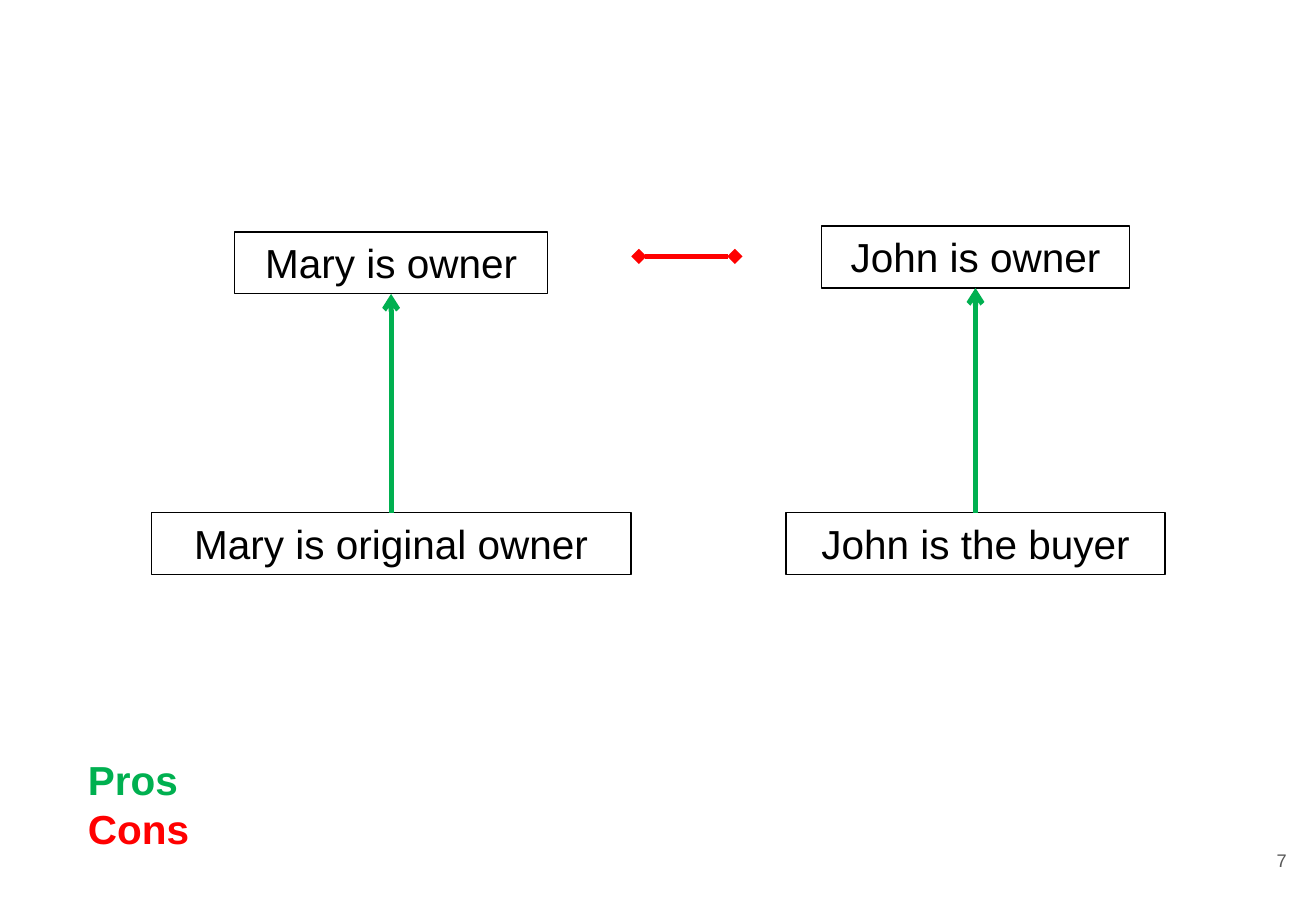
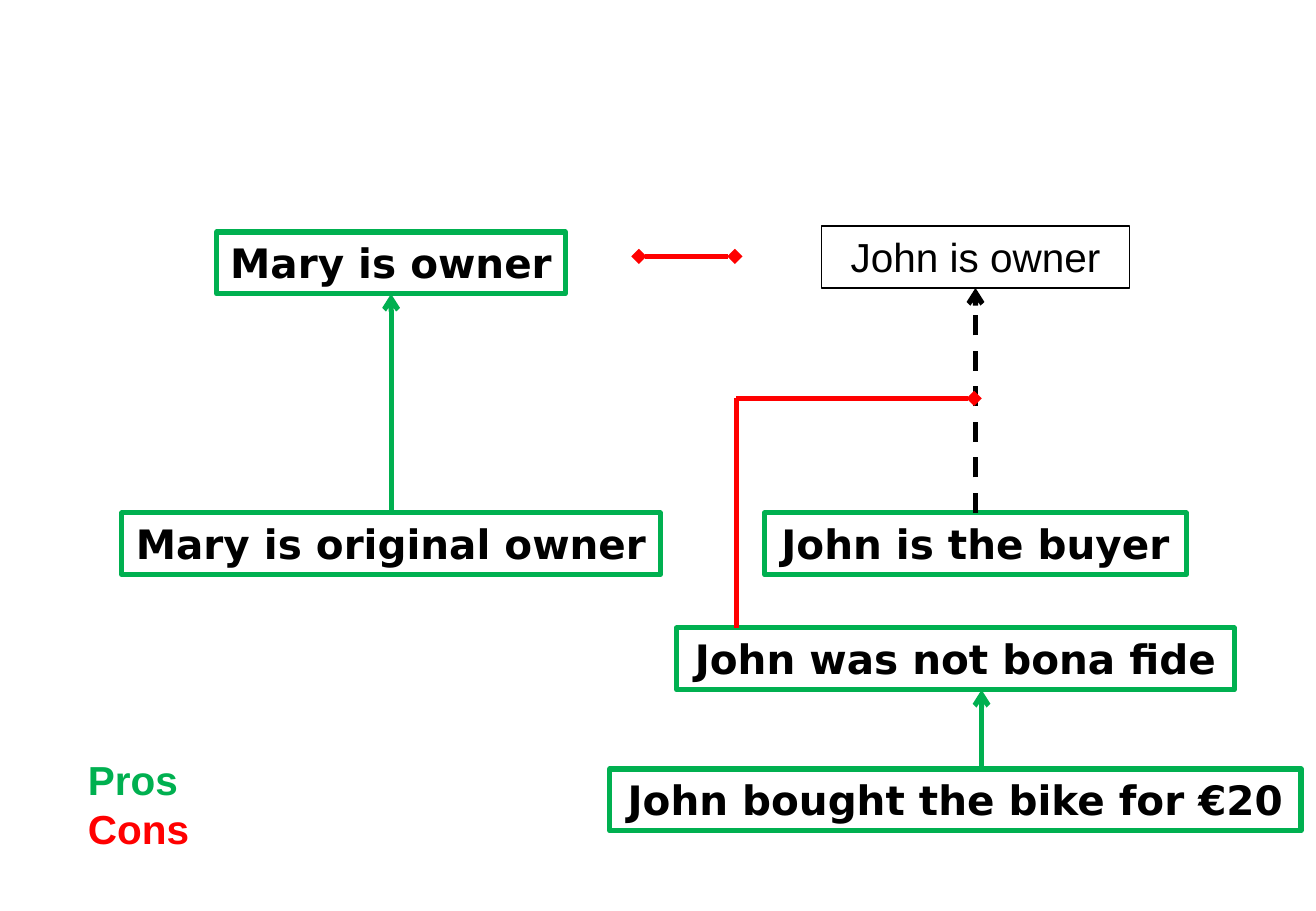
from lxml.etree import SubElement
from pptx import Presentation
from pptx.dml.color import RGBColor
from pptx.enum.dml import MSO_LINE_DASH_STYLE as DASH
from pptx.enum.shapes import MSO_CONNECTOR_TYPE as CONNECTOR, MSO_SHAPE as SHAPE
from pptx.enum.text import MSO_ANCHOR as ANCHOR, MSO_AUTO_SIZE as FIT, PP_ALIGN as ALIGN
from pptx.oxml.ns import qn
from pptx.util import Pt

BLACK, GREEN, RED, GRAY = "000000", "00B050", "FF0000", "595959"
TOP, BOTTOM = 0, 2


def color(value):
    return RGBColor.from_string(value)


def apply(target, values):
    for name, value in values.items():
        setattr(target, name, value)


class ArgumentDiagram:
    box_height = 36.7
    plain = {"name": "Arial", "size": Pt(24), "bold": False}
    accepted = {"name": "DejaVu Sans", "size": Pt(24), "bold": True}
    strong = {"name": "Arial", "size": Pt(24), "bold": True}
    small = {"name": "Arial", "size": Pt(10.8), "bold": False}
    grow = {"auto_size": FIT.SHAPE_TO_FIT_TEXT, "vertical_anchor": ANCHOR.TOP}

    def __init__(self, presentation):
        self.presentation = presentation
        self.slide = None

    def new_slide(self):
        layout = self.presentation.slide_layouts[6]
        self.slide = self.presentation.slides.add_slide(layout)

    def add_text(self, paragraph, text, font, text_color):
        run = paragraph.add_run()
        run.text = text
        apply(run.font, font)
        run.font.color.rgb = color(text_color)

    def statement(self, text, center, top, width, accepted=False):
        shape = self.slide.shapes.add_shape(
            SHAPE.RECTANGLE, Pt(center - width / 2), Pt(top), Pt(width), Pt(self.box_height))
        shape.shadow.inherit = False
        shape.fill.background()
        shape.line.color.rgb = color(GREEN if accepted else BLACK)
        shape.line.width = Pt(3 if accepted else 0.75)
        apply(shape.text_frame, {**self.grow, "word_wrap": False})
        paragraph = shape.text_frame.paragraphs[0]
        paragraph.alignment = ALIGN.CENTER
        self.add_text(paragraph, text, self.accepted if accepted else self.plain, BLACK)
        return shape

    def line(self, start, end, line_color, head=None, tail=None, dash=None):
        connector = self.slide.shapes.add_connector(
            CONNECTOR.STRAIGHT, *(Pt(value) for value in (*start, *end)))
        connector.line.color.rgb = color(line_color)
        apply(connector.line, {"width": Pt(3), "dash_style": dash})
        properties = connector._element.spPr
        outline = properties.find(qn("a:ln"))
        for tag, kind in (("a:headEnd", head), ("a:tailEnd", tail)):
            if kind:
                SubElement(outline, qn(tag), type=kind)
        SubElement(properties, qn("a:effectLst"))
        return connector

    def support(self, reason, claim, line_color=GREEN, dash=None):
        connector = self.line((0, 0), (0, 0), line_color, tail="arrow", dash=dash)
        connector.begin_connect(reason, TOP)
        connector.end_connect(claim, BOTTOM)

    def text_box(self, left, top, width, height, alignment, values):
        shape = self.slide.shapes.add_textbox(Pt(left), Pt(top), Pt(width), Pt(height))
        apply(shape.text_frame, {"word_wrap": True, **values})
        paragraph = shape.text_frame.paragraphs[0]
        paragraph.alignment = alignment
        return paragraph

    def legend(self):
        paragraph = self.text_box(36, 444.2, 92.2, 65.5, ALIGN.CENTER, self.grow)
        self.add_text(paragraph, "Pros ", self.strong, GREEN)
        paragraph.add_line_break()
        self.add_text(paragraph, "Cons", self.strong, RED)

    def page_number(self, number):
        margins = {f"margin_{side}": Pt(7.2) for side in ("left", "top", "right", "bottom")}
        paragraph = self.text_box(722.9, 489.6, 46.8, 41, ALIGN.RIGHT,
                                  {**margins, "vertical_anchor": ANCHOR.MIDDLE})
        self.add_text(paragraph, number, self.small, GRAY)

    def ownership(self, widths, accepted, john_link):
        mary, john = 231.8, 578.2
        claim_width, origin_width, buyer_width = widths
        john_owner = self.statement("John is owner", john, 134, 182.2)
        mary_owner = self.statement("Mary is owner", mary, 137.5, claim_width, accepted)
        origin = self.statement("Mary is original owner", mary, 304, origin_width, accepted)
        buyer = self.statement("John is the buyer", john, 304, buyer_width, accepted)
        self.support(origin, mary_owner)
        self.support(buyer, john_owner, **john_link)
        self.line((378.7, 152), (435.6, 152), RED, head="diamond", tail="diamond")
        self.legend()

    def bona_fide_attack(self):
        center, turn, middle = 566.3, 436.3, 236.2
        claim_top, reason_top = 372.2, 455.8
        self.statement("John was not bona fide", center, claim_top, 330.5, True)
        self.line((turn, claim_top), (turn, middle), RED)
        self.line((turn, middle), (577.4, middle), RED, tail="diamond")
        self.statement("John bought the bike for €20", center, reason_top, 409.7, True)
        self.line((581.8, reason_top), (581.8, claim_top + self.box_height),
                  GREEN, tail="arrow")


def main():
    presentation = Presentation()
    apply(presentation, {"slide_width": Pt(780), "slide_height": Pt(540)})
    diagram = ArgumentDiagram(presentation)

    diagram.new_slide()
    diagram.ownership((185.8, 284.4, 224.6), False, {})
    diagram.page_number("7")

    diagram.new_slide()
    diagram.ownership((206.6, 319, 249.8), True,
                      {"line_color": BLACK, "dash": DASH.DASH})
    diagram.bona_fide_attack()

    presentation.save("out.pptx")


if __name__ == "__main__":
    main()
